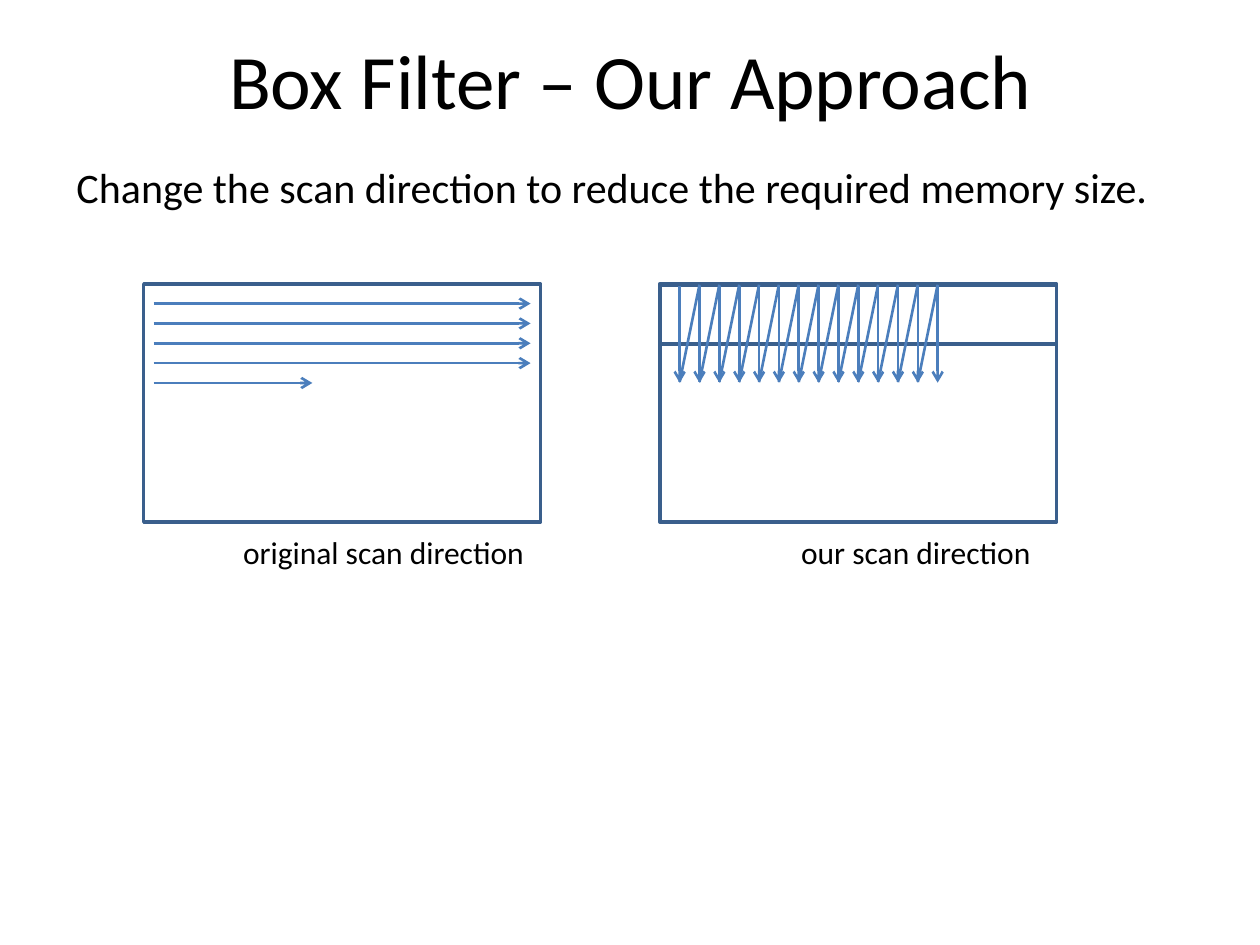
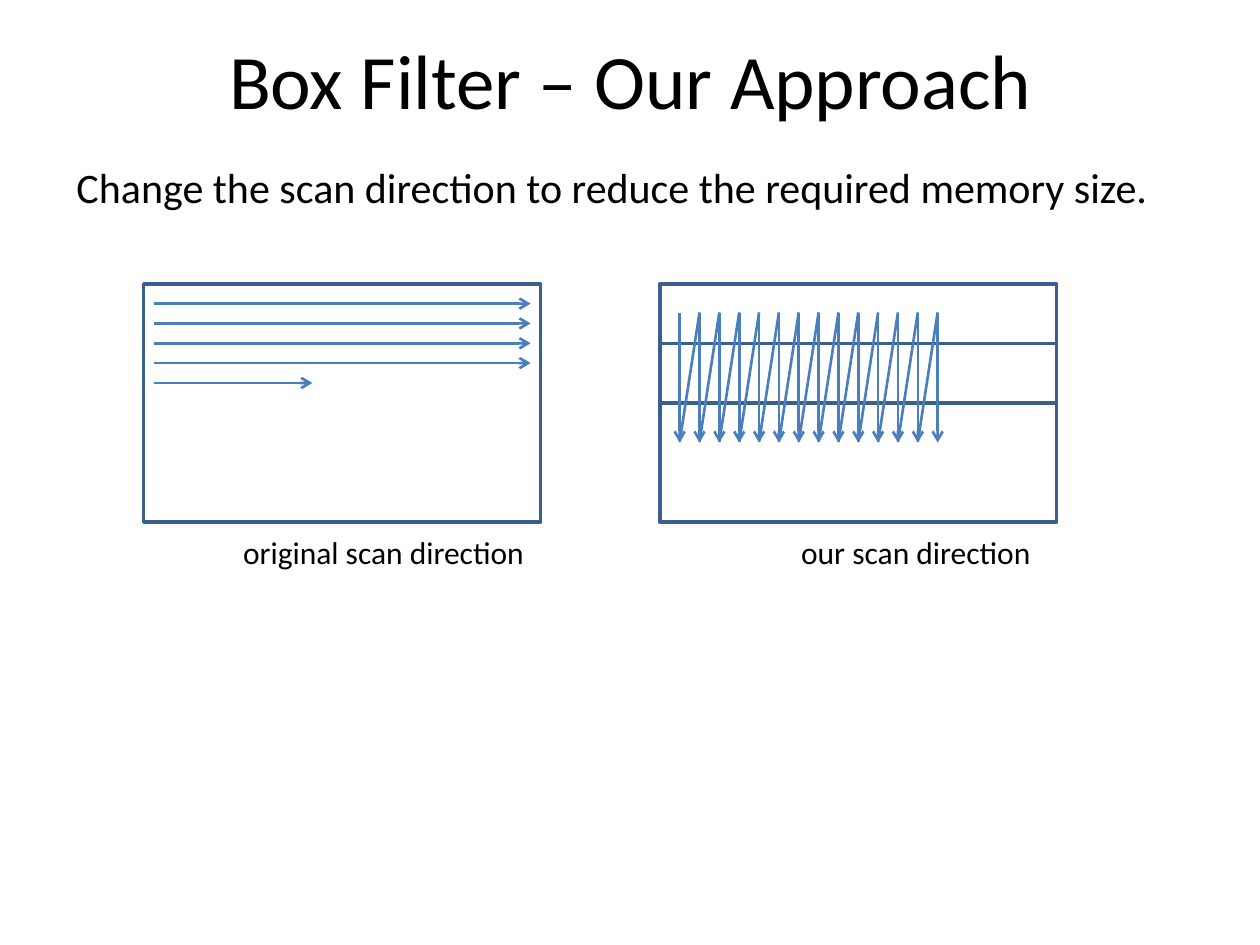
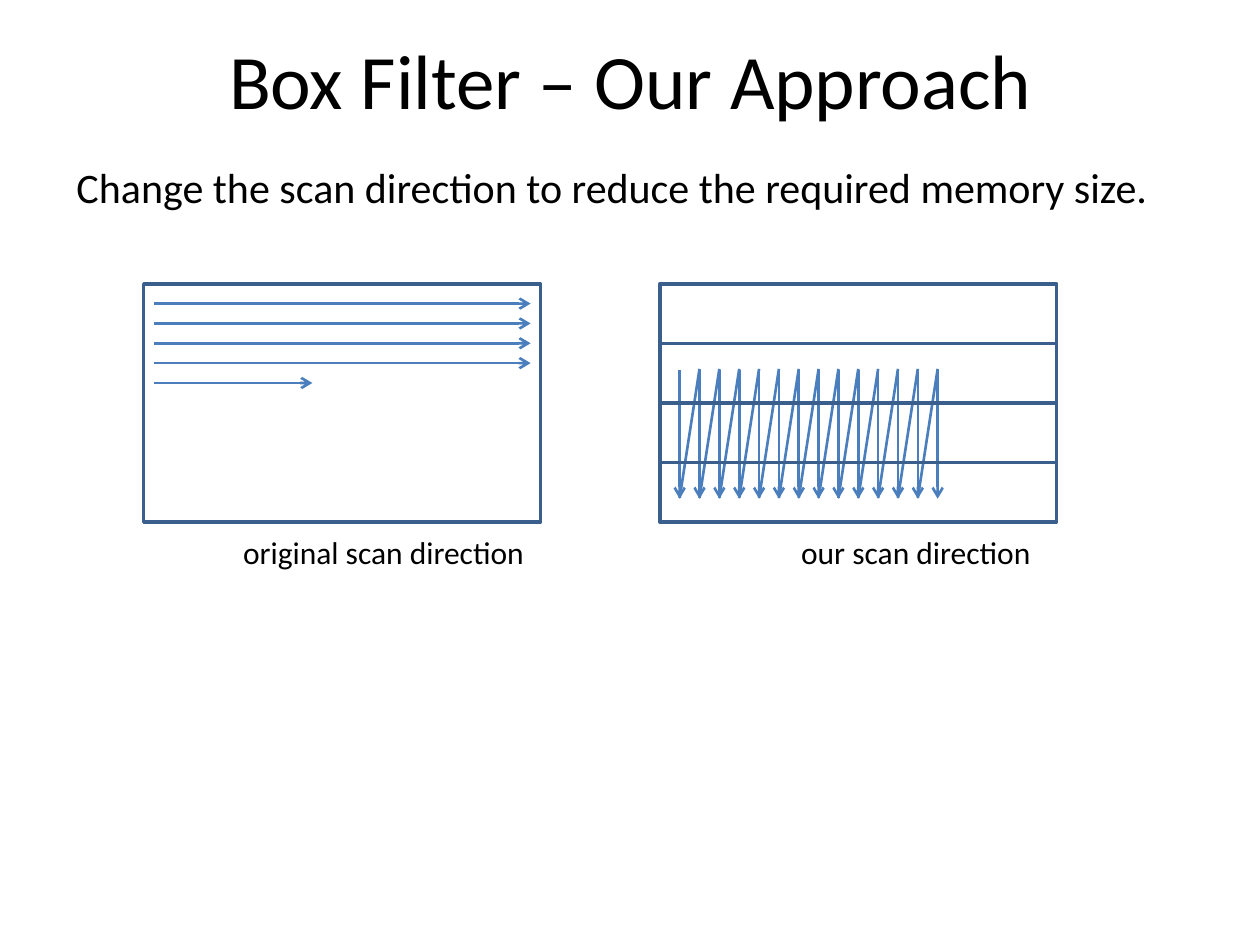
from lxml import etree
from pptx import Presentation
from pptx.dml.color import RGBColor
from pptx.enum import shapes, text
from pptx.oxml import ns
from pptx.util import Pt

TITLE = "Box Filter – Our Approach"
BODY = "Change the scan direction to reduce the required memory size."
FONT, INK, EDGE, SCAN = "Calibri", "000000", "3A5F8C", "4B7EBC"

# left, top, width, height
TITLE_BOX = (36.5, 0, 648, 90)
BODY_BOX = (36.5, 88.5, 648, 73.5)
LABELS = [
    ("our scan direction", (450.7, 301, 147.6, 29)),
    ("original scan direction", (131.8, 301, 177.1, 29)),
]

WIDE, HIGH, BAND = 226.8, 136.1, 34
LEFT, RIGHT, TOP = 82.1, 377, 162.2
STEP = 11.34

ROW_X, ROW_Y = 87.8, 173.5
ROWS = [215.4] * 4 + [90.7]
COL_X, COLS = 388.4, 14

# top and bottom of the zigzag, bands below it, bands above it
SLIDES = [
    {"span": (163.3, 218.7), "under": [162.7], "over": []},
    {"span": (179.1, 252.9), "under": [196.3], "over": []},
    {"span": (211.4, 285), "under": [196.3], "over": [230.3]},
]


def rgb(code):
    return RGBColor.from_string(code)


def place(shape, box):
    shape.left, shape.top, shape.width, shape.height = map(Pt, box)


def write(shape, words, size):
    shape.text_frame.text = words
    para = shape.text_frame.paragraphs[0]
    para.font.name, para.font.size = FONT, Pt(size)
    para.font.color.rgb = rgb(INK)
    return para


def frame(slide, x, y, high):
    rect = slide.shapes.add_shape(
        shapes.MSO_SHAPE.RECTANGLE, *map(Pt, (x, y, WIDE, high)))
    rect.shadow.inherit = False
    rect.fill.background()
    rect.line.color.rgb = rgb(EDGE)
    rect.line.width = Pt(2)


def stroke(group, start, end, arrow=False):
    line = group.shapes.add_connector(
        shapes.MSO_CONNECTOR.STRAIGHT, *map(Pt, start + end))
    line.line.color.rgb = rgb(SCAN)
    line.line.width = Pt(1.5)
    props = line._element.spPr
    if arrow:
        etree.SubElement(props.find(ns.qn("a:ln")), ns.qn("a:tailEnd"), type="arrow")
    etree.SubElement(props, ns.qn("a:effectLst"))


def head(slide):
    title, body = slide.placeholders
    place(title, TITLE_BOX)
    write(title, TITLE, 44)
    place(body, BODY_BOX)
    props = write(body, BODY, 24)._p.get_or_add_pPr()
    props.set("marL", "0")
    props.set("indent", "0")
    props.insert(0, etree.Element(ns.qn("a:buNone")))


def rows(slide):
    group = slide.shapes.add_group_shape()
    for i, size in enumerate(ROWS):
        y = ROW_Y + i * STEP
        stroke(group, (ROW_X, y), (ROW_X + size, y), True)


def zigzag(slide, top, base):
    """Draw downward scans, each joined to the top of the next."""
    group = slide.shapes.add_group_shape()
    for i in range(COLS):
        x = COL_X + i * STEP
        stroke(group, (x, top), (x, base), True)
        if i < COLS - 1:
            stroke(group, (x, base - 0.4), (x + STEP, top - 0.6))


def label(slide, words, box):
    area = slide.shapes.add_textbox(*map(Pt, box))
    write(area, words, 18)
    area.text_frame.word_wrap = False
    area.text_frame.auto_size = text.MSO_AUTO_SIZE.SHAPE_TO_FIT_TEXT


def main():
    deck = Presentation()
    deck.slide_width, deck.slide_height = Pt(720), Pt(540)
    for data in SLIDES:
        slide = deck.slides.add_slide(deck.slide_layouts[1])
        head(slide)
        for x in (LEFT, RIGHT):
            frame(slide, x, TOP, HIGH)
        rows(slide)
        for y in data["under"]:
            frame(slide, RIGHT, y, BAND)
        zigzag(slide, *data["span"])
        for y in data["over"]:
            frame(slide, RIGHT, y, BAND)
        for words, box in LABELS:
            label(slide, words, box)
    deck.save("out.pptx")


if __name__ == "__main__":
    main()
